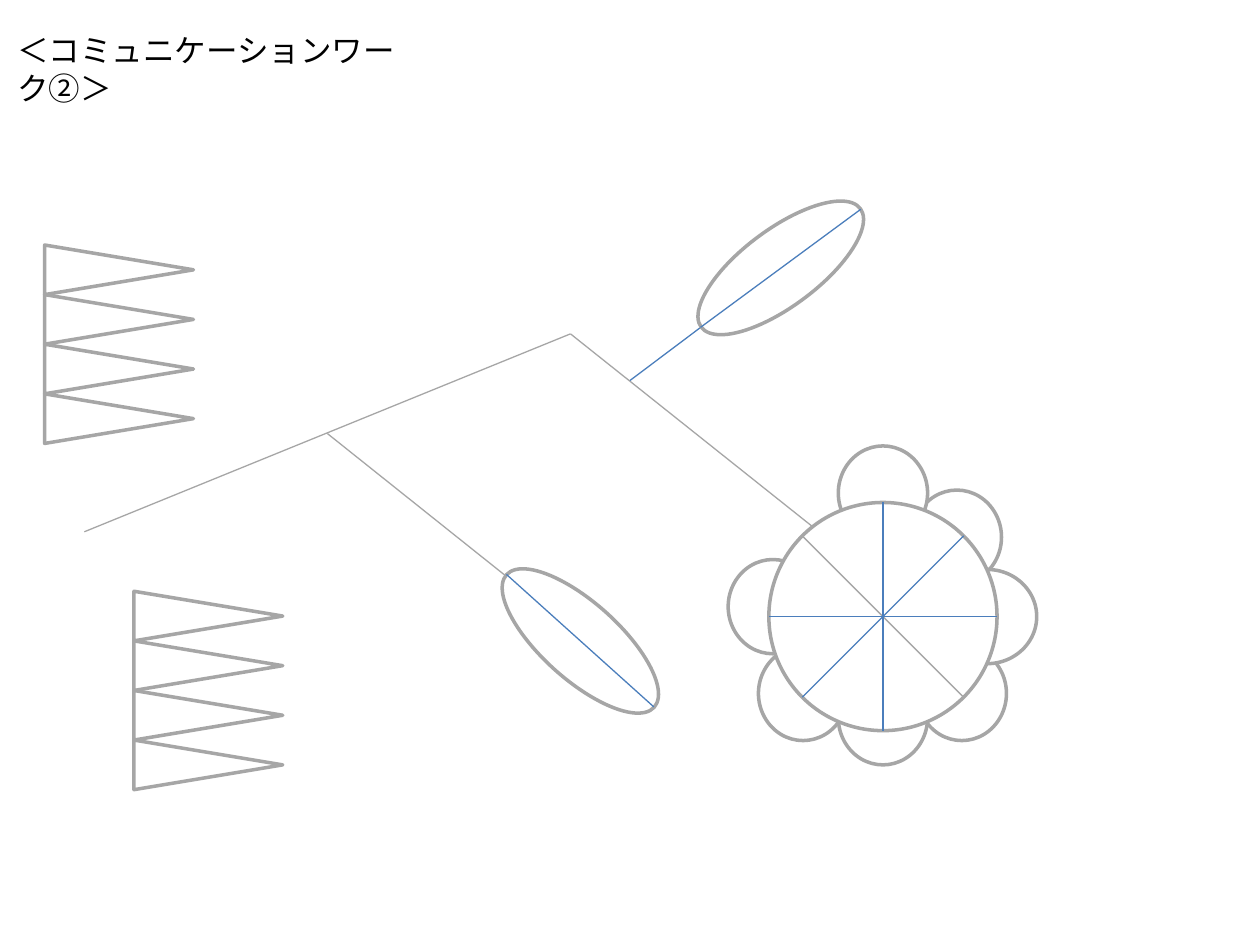
from math import cos, radians, sin

from lxml.etree import SubElement
from pptx import Presentation
from pptx.dml.color import RGBColor
from pptx.enum.shapes import MSO_CONNECTOR, MSO_SHAPE
from pptx.enum.text import MSO_AUTO_SIZE
from pptx.oxml.ns import qn
from pptx.util import Cm, Pt

# Lengths in cm
TITLE = "＜コミュニケーションワーク②＞"
FONT = "Noto Sans CJK JP"
GRAY, BLUE, WHITE, BLACK = "A6A6A6", "4B7EBC", "FFFFFF", "000000"

SPIKE_ROWS = [(2.4, 5.44), (4.2, 12.42)]  # centre of the top spike
SPIKE_COUNT, SPIKE_BASE, SPIKE_LENGTH = 4, 1, 3

STEMS = [
    ((1.7, 10.72), (11.5, 6.73), GRAY),
    ((11.5, 6.73), (16.51, 10.72), GRAY),
    ((6.6, 8.74), (11.6, 12.73), GRAY),
    ((12.7, 7.67), (15.6, 5.49), BLUE),
]

FLOWER, RADIUS = (17.8, 12.43), 2.3
PETAL_HEIGHT = 1.9
PETALS = [  # centre, width
    ((16.19, 13.98), 1.8),
    ((19.29, 10.83), 1.8),
    ((19.39, 13.98), 1.8),
    ((19.9, 12.43), 2),
    ((17.8, 9.94), 1.8),
    ((17.8, 14.47), 1.8),
    ((15.58, 12.23), 1.8),
]
SPOKES = [(45, GRAY), (-45, BLUE), (90, BLUE), (0, BLUE)]  # angle, colour

LEAF_SIZE = (4, 1.55)
LEAVES = [  # centre, rotation, vein ends
    ((11.7, 12.92), 221.9, (13.18, 14.25), (10.21, 11.58)),
    ((15.74, 5.4), 323.3, (14.12, 6.6), (17.35, 4.22)),
]


def rgb(color):
    return RGBColor.from_string(color)


def add_outline(shapes, kind, center, size, rotation=0):
    """Add a white shape with a gray outline, placed by its centre."""
    (x, y), (w, h) = center, size
    s = shapes.add_shape(kind, Cm(x - w / 2), Cm(y - h / 2), Cm(w), Cm(h))
    s.rotation = rotation
    s.shadow.inherit = False
    s.fill.solid()
    s.fill.fore_color.rgb = rgb(WHITE)
    s.line.color.rgb = rgb(GRAY)
    s.line.width = Pt(2)


def add_line(shapes, start, end, color):
    c = shapes.add_connector(MSO_CONNECTOR.STRAIGHT, *map(Cm, start + end))
    c.line.color.rgb = rgb(color)
    c.line.width = Pt(0.75)
    SubElement(c._element.spPr, qn("a:effectLst"))


def add_title(shapes):
    tf = shapes.add_textbox(Cm(0.1), Cm(0.5), Cm(8.58), Cm(1.02)).text_frame
    tf.word_wrap = True
    tf.auto_size = MSO_AUTO_SIZE.SHAPE_TO_FIT_TEXT
    r = tf.paragraphs[0].add_run()
    r.text = TITLE
    r.font.size = Pt(18)
    r.font.name = FONT
    r.font.color.rgb = rgb(BLACK)
    SubElement(r.font._element, qn("a:ea"), typeface=FONT)


def add_flower(shapes):
    for center, width in PETALS:
        add_outline(shapes, MSO_SHAPE.OVAL, center, (width, PETAL_HEIGHT))
    add_outline(shapes, MSO_SHAPE.OVAL, FLOWER, (2 * RADIUS, 2 * RADIUS))
    x, y = FLOWER
    for angle, color in SPOKES:
        dx, dy = RADIUS * cos(radians(angle)), RADIUS * sin(radians(angle))
        add_line(shapes, (x - dx, y - dy), (x + dx, y + dy), color)


def main():
    prs = Presentation()
    prs.slide_width, prs.slide_height = Cm(25.4), Cm(19.05)
    shapes = prs.slides.add_slide(prs.slide_layouts[6]).shapes

    add_title(shapes)
    for x, y in SPIKE_ROWS:
        for i in range(SPIKE_COUNT):
            add_outline(shapes, MSO_SHAPE.ISOSCELES_TRIANGLE,
                        (x, y + i * SPIKE_BASE), (SPIKE_BASE, SPIKE_LENGTH), 90)
    for start, end, color in STEMS:
        add_line(shapes, start, end, color)
    add_flower(shapes)
    for center, rotation, start, end in LEAVES:
        leaf = shapes.add_group_shape().shapes
        add_outline(leaf, MSO_SHAPE.OVAL, center, LEAF_SIZE, rotation)
        add_line(leaf, start, end, BLUE)

    prs.save("out.pptx")


if __name__ == "__main__":
    main()
